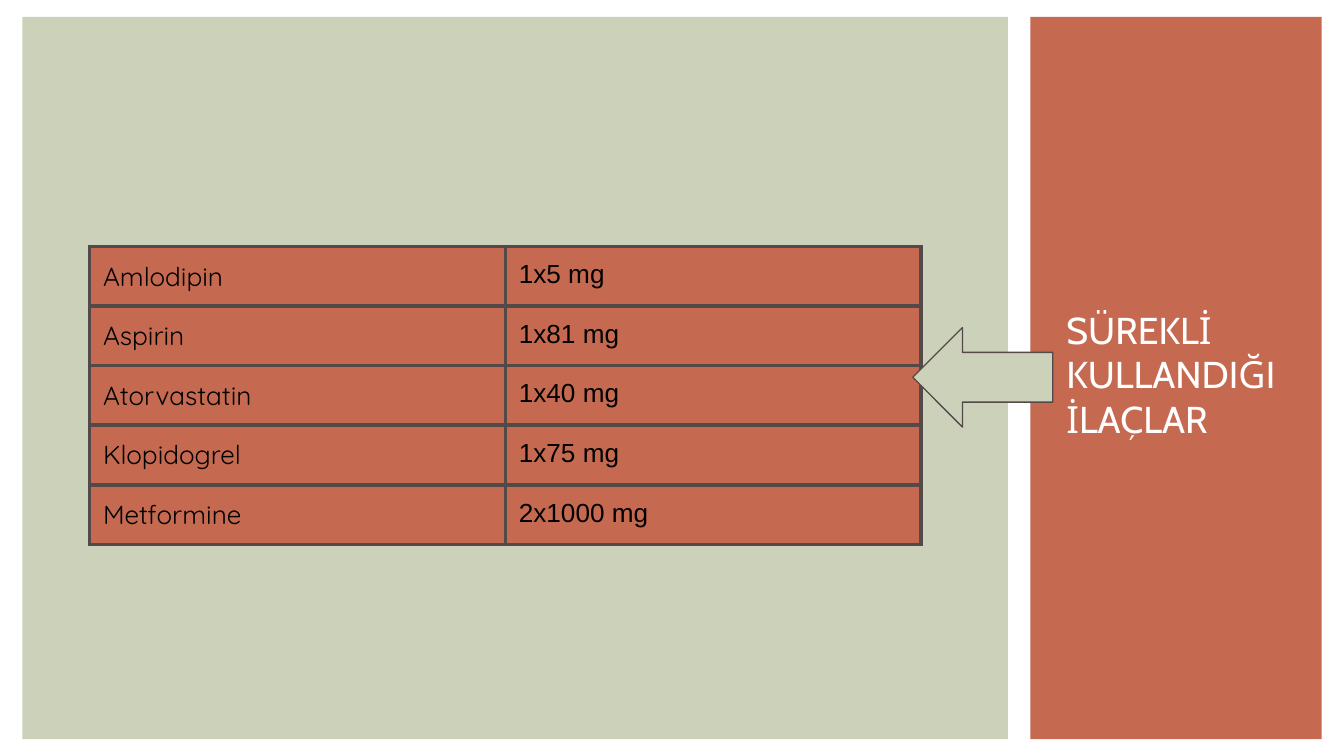
from lxml.etree import SubElement
from pptx import Presentation
from pptx.dml.color import RGBColor
from pptx.enum.shapes import MSO_SHAPE as Preset
from pptx.enum.text import MSO_ANCHOR as Anchor, MSO_AUTO_SIZE as AutoSize, PP_ALIGN as Align
from pptx.oxml.ns import qn
from pptx.util import Emu, Pt

EMU_PER_PX = 9525
RUST, SAGE, BROWN = "C66951", "CCD1B9", "534949"
WHITE, BLACK = "FFFFFF", "000000"
CELL_MARGIN = Pt(7.2)
MEDICINES = [
    ("Amlodipin", "1x5 mg"),
    ("Aspirin", "1x81 mg"),
    ("Atorvastatin", "1x40 mg"),
    ("Klopidogrel", "1x75 mg"),
    ("Metformine", "2x1000 mg"),
]


def px(length):
    return Emu(length * EMU_PER_PX)


def paint(fill, color):
    fill.solid()
    fill.fore_color.rgb = RGBColor.from_string(color)


def style_text(text_frame, font_name, size, color):
    for paragraph in text_frame.paragraphs:
        paragraph.alignment = Align.LEFT
        for run in paragraph.runs:
            run.font.name = font_name
            run.font.size = Pt(size)
            run.font.color.rgb = RGBColor.from_string(color)


def add_filled_shape(slide, preset, box, color, line_color=None):
    shape = slide.shapes.add_shape(preset, *map(px, box))
    shape.shadow.inherit = False
    paint(shape.fill, color)
    if line_color:
        paint(shape.line.fill, line_color)
        shape.line.width = Pt(0.75)
    else:
        shape.line.fill.background()


def place_title(slide, text, box):
    title = slide.shapes.title
    title.left, title.top, title.width, title.height = map(px, box)
    text_frame = title.text_frame
    text_frame.text = text
    text_frame.word_wrap = True
    text_frame.auto_size = AutoSize.NONE
    text_frame.vertical_anchor = Anchor.BOTTOM
    style_text(text_frame, "Cabin", 20, WHITE)
    slide.shapes._spTree.append(title._element)


def add_borders(cell, color, width):
    properties = cell._tc.get_or_add_tcPr()
    for side in ("lnL", "lnR", "lnT", "lnB"):
        line = SubElement(properties, qn(f"a:{side}"), w=str(Pt(width)))
        fill = SubElement(line, qn("a:solidFill"))
        SubElement(fill, qn("a:srgbClr"), val=color)


def format_cell(cell, text, font_name):
    cell.text = text
    cell.margin_left = cell.margin_right = CELL_MARGIN
    cell.margin_top = cell.margin_bottom = CELL_MARGIN
    style_text(cell.text_frame, font_name, 14, BLACK)
    add_borders(cell, BROWN, 2.25)
    paint(cell.fill, RUST)


def add_medicine_table(slide, left, top, column_width, row_height):
    size = px(2 * column_width), px(len(MEDICINES) * row_height)
    frame = slide.shapes.add_table(len(MEDICINES), 2, px(left), px(top), *size)
    table = frame.table
    table.first_row = table.horz_banding = False
    for row, medicine in enumerate(MEDICINES):
        for column, font_name in enumerate(("Quicksand", "Arial")):
            format_cell(table.cell(row, column), medicine[column], font_name)


def main():
    """Build the slide listing the medicines in regular use."""
    presentation = Presentation()
    presentation.slide_width, presentation.slide_height = px(960), px(540)
    slide = presentation.slides.add_slide(presentation.slide_layouts[5])
    paint(slide.background.fill, WHITE)
    add_filled_shape(slide, Preset.RECTANGLE, (736, 12, 208, 516), RUST)
    add_filled_shape(slide, Preset.RECTANGLE, (16, 12, 704, 516), SAGE)
    place_title(slide, "SÜREKLİ KULLANDIĞI İLAÇLAR", (752, 188, 200, 132))
    add_medicine_table(slide, 64, 176, 297, 40)
    add_filled_shape(slide, Preset.LEFT_ARROW, (652, 234, 100, 71), SAGE, BROWN)
    presentation.save("out.pptx")


if __name__ == "__main__":
    main()
